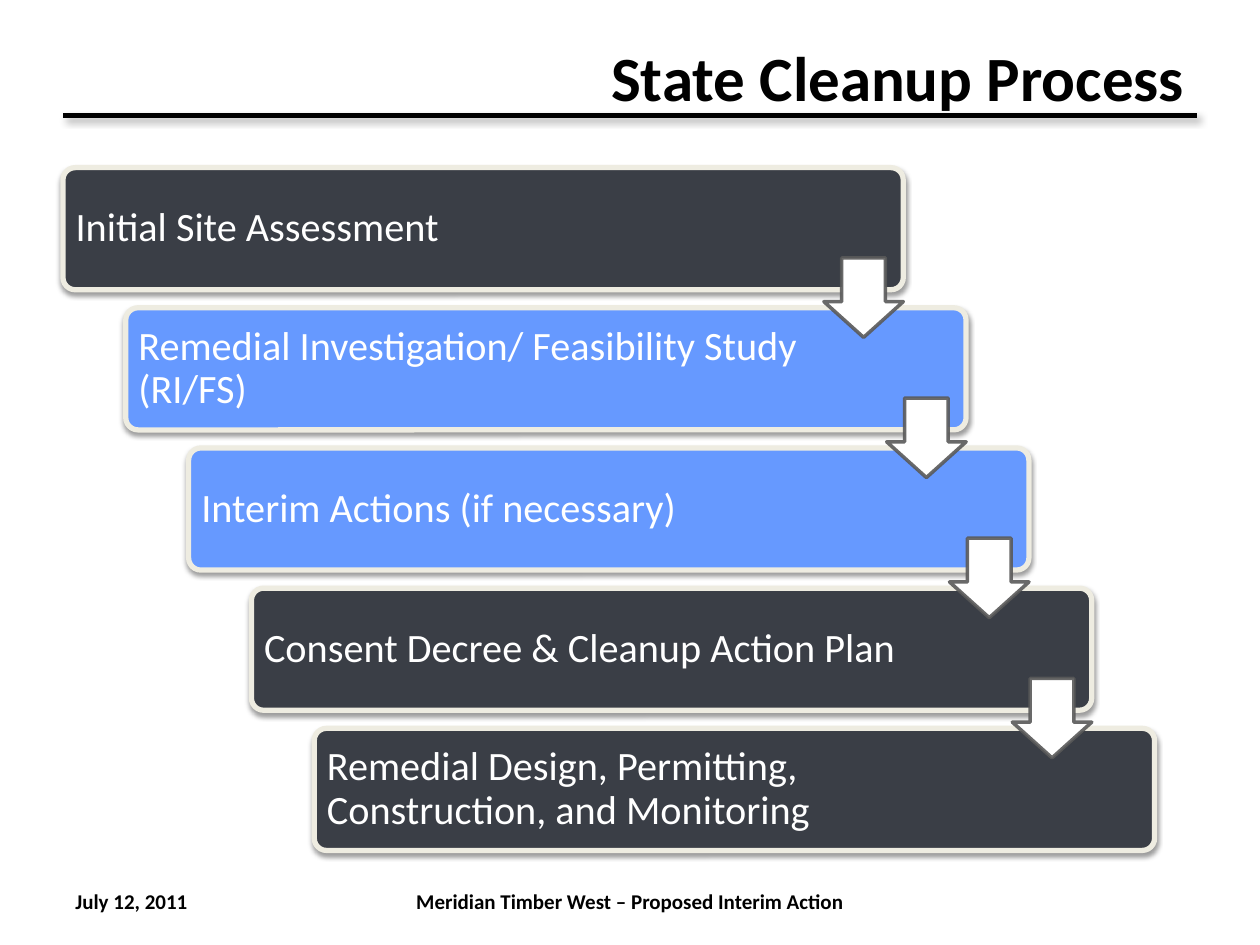
"""Build the State Cleanup Process slide: five stepped boxes joined by arrows."""
from lxml import etree
from pptx import Presentation
from pptx.dml.color import RGBColor
from pptx.enum.shapes import MSO_CONNECTOR, MSO_SHAPE
from pptx.enum.text import MSO_ANCHOR, PP_ALIGN
from pptx.oxml.ns import qn
from pptx.util import Pt

LEFT, CENTER, RIGHT = PP_ALIGN.LEFT, PP_ALIGN.CENTER, PP_ALIGN.RIGHT
MIDDLE = MSO_ANCHOR.MIDDLE
ROUNDED, DOWN_ARROW = MSO_SHAPE.ROUNDED_RECTANGLE, MSO_SHAPE.DOWN_ARROW
STRAIGHT = MSO_CONNECTOR.STRAIGHT

FONT = "Calibri"
COLORS = {
    "black": "000000", "white": "FFFFFF", "slate": "3A3E46",
    "blue": "6699FF", "cream": "EEECE1", "gray": "595959",
}
TITLE = "State Cleanup Process"
STEPS = [
    ("Initial Site Assessment", "slate"),
    ("Remedial Investigation/ Feasibility Study (RI/FS)", "blue"),
    ("Interim Actions (if necessary)", "blue"),
    ("Consent Decree & Cleanup Action Plan", "slate"),
    ("Remedial Design, Permitting, Construction, and Monitoring", "slate"),
]
FOOTERS = [
    ("July 12, 2011", 36, 168, LEFT),
    ("Meridian Timber West – Proposed Interim Action", 228, 264, CENTER),
]
BOX_LEFT, BOX_TOP, BOX_WIDTH, BOX_HEIGHT = 36, 95.8, 480.2, 69.8
STEP_X, STEP_Y = 35.9, 80.1
ARROW_SIZE, ARROW_DROP = 45.4, 51.6


def color(name):
    return RGBColor.from_string(COLORS[name])


def write(shape, text, size, align, tint="black", bold=False):
    frame = shape.text_frame
    frame.word_wrap = True
    frame.vertical_anchor = MIDDLE
    para = frame.paragraphs[0]
    para.alignment = align
    span = para.add_run()
    span.text = text
    span.font.name = FONT
    span.font.size = Pt(size)
    span.font.bold = bold
    span.font.color.rgb = color(tint)
    return para


def add_shadow(shape, alpha, blur, distance, angle):
    effects = etree.SubElement(shape._element.spPr, qn("a:effectLst"))
    shadow = etree.SubElement(
        effects, qn("a:outerShdw"), blurRad=str(Pt(blur)), dist=str(Pt(distance)),
        dir=str(angle * 60000), algn="tl", rotWithShape="0")
    tone = etree.SubElement(shadow, qn("a:srgbClr"), val=COLORS["black"])
    etree.SubElement(tone, qn("a:alpha"), val=str(alpha * 1000))


def add_block(page, kind, place, adjustments, fill, line, weight):
    block = page.shapes.add_shape(kind, *map(Pt, place))
    for index, value in enumerate(adjustments):
        block.adjustments[index] = value
    block.fill.solid()
    block.fill.fore_color.rgb = color(fill)
    block.line.color.rgb = color(line)
    block.line.width = Pt(weight)
    return block


def add_step(page, index, text, fill):
    place = (BOX_LEFT + index * STEP_X, BOX_TOP + index * STEP_Y, BOX_WIDTH, BOX_HEIGHT)
    box = add_block(page, ROUNDED, place, [0.1], fill, "cream", 3)
    add_shadow(box, 38, 3.1, 1.6, 90)
    box.text_frame.margin_left = Pt(5.2)
    box.text_frame.margin_right = Pt(86)
    write(box, text, 23, LEFT, "white").line_spacing = 0.9


def add_arrow(page, index):
    left = BOX_LEFT + BOX_WIDTH - ARROW_SIZE + index * STEP_X
    top = BOX_TOP + ARROW_DROP + index * STEP_Y
    arrow = add_block(page, DOWN_ARROW, (left, top, ARROW_SIZE, ARROW_SIZE),
                      [0.45, 0.55], "white", "gray", 2)
    arrow.shadow.inherit = False
    # python-pptx orders the down arrow's values as head length, then shaft width
    arrow.adjustments[0], arrow.adjustments[1] = 0.55, 0.45
    tone = arrow.line._ln.find(".//" + qn("a:srgbClr"))
    etree.SubElement(tone, qn("a:alpha"), val="90000")


def main():
    deck = Presentation()
    deck.slide_width, deck.slide_height = Pt(720), Pt(540)
    page = deck.slides.add_slide(deck.slide_layouts.get_by_name("Title Only"))

    rule = page.shapes.add_connector(STRAIGHT, Pt(36), Pt(66), Pt(684), Pt(66))
    rule.line.color.rgb = color("black")
    rule.line.width = Pt(2.5)
    add_shadow(rule, 40, 4, 3, 45)

    title = page.shapes.title
    title.left, title.top, title.width, title.height = map(Pt, (72, 21.6, 612, 44.6))
    write(title, TITLE, 36, RIGHT, bold=True)

    for text, left, width, align in FOOTERS:
        footer = page.shapes.add_textbox(Pt(left), Pt(500.4), Pt(width), Pt(28.8))
        write(footer, text, 12, align, bold=True)

    for index, (text, fill) in enumerate(STEPS):
        add_step(page, index, text, fill)
    for index in range(len(STEPS) - 1):
        add_arrow(page, index)

    deck.save("out.pptx")


if __name__ == "__main__":
    main()
